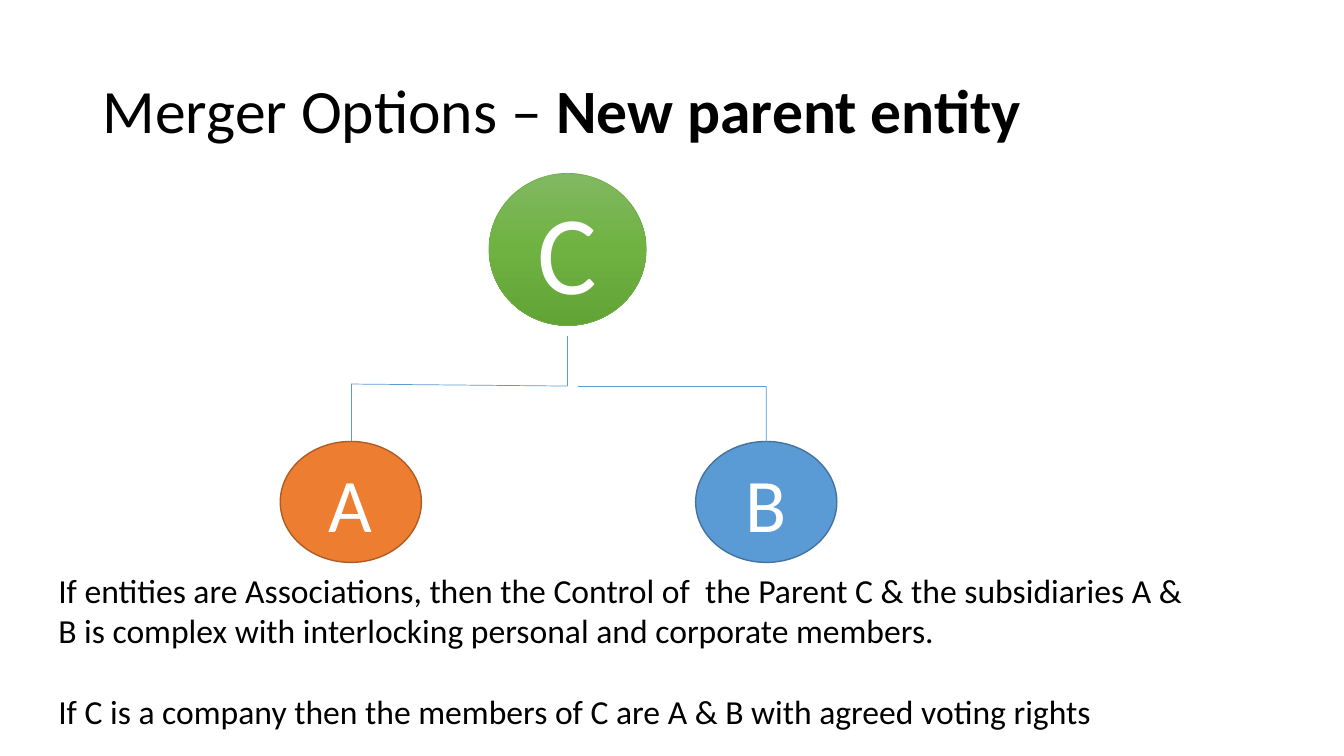
"""Build the merger options slide showing a new parent entity."""
from copy import deepcopy
from dataclasses import dataclass

from lxml import etree
from pptx import Presentation, util as u
from pptx.dml.color import RGBColor
from pptx.enum import shapes, text
from pptx.oxml.ns import qn

COLOURS = {
    "text": "000000", "light": "FFFFFF", "link": "5B9BD5",
    "a": "ED7D31", "a_edge": "AF5C24", "b": "5B9BD5", "b_edge": "43739E",
    "c_top": "81B861", "c_middle": "6FB242", "c_bottom": "62A336", "c_edge": "70AD47",
}
FONT = "Calibri"
NODE_TOP, NODE_WIDTH, NODE_HEIGHT = 4.38, 1.4, 1.2
PARENT_X, A_X, B_X = 5.63, 3.48, 7.6
BAR_Y, A_BAR_Y = 3.83, 3.81


@dataclass
class Entity:
    name: str
    left: float
    top: float
    width: float
    height: float
    size: int
    fills: tuple[str, ...]
    edge: str
    edge_width: float


@dataclass
class Link:
    start: tuple[float, float]
    end: tuple[float, float]
    target: str = ""


ENTITIES = [
    Entity("A", A_X - NODE_WIDTH / 2, NODE_TOP, NODE_WIDTH, NODE_HEIGHT, 54, ("a",), "a_edge", 1),
    Entity("B", B_X - NODE_WIDTH / 2, NODE_TOP, NODE_WIDTH, NODE_HEIGHT, 54, ("b",), "b_edge", 1),
    Entity("C", 4.85, 1.72, 1.56, 1.51, 80, ("c_top", "c_middle", "c_bottom"), "c_edge", 0.5),
]
LINKS = [
    Link((PARENT_X, 3.33), (PARENT_X, BAR_Y)),
    Link((PARENT_X, BAR_Y), (A_X, A_BAR_Y)),
    Link((5.73, BAR_Y), (B_X, BAR_Y)),
    Link((B_X, BAR_Y), (B_X, NODE_TOP), "B"),
    Link((A_X, A_BAR_Y), (A_X, NODE_TOP), "A"),
]
NOTES = [
    "If entities are Associations, then the Control of  the Parent C & the subsidiaries A & "
    "B is complex with interlocking personal and corporate members.",
    "If C is a company then the members of C are A & B with agreed voting rights",
]


def colour(name: str) -> RGBColor:
    return RGBColor.from_string(COLOURS[name])


def write(para, words: str, *, size: float, ink: str = "text", bold: bool = False) -> None:
    span = para.add_run()
    span.text = words
    span.font.name = FONT
    span.font.size = u.Pt(size)
    span.font.bold = bold
    span.font.color.rgb = colour(ink)


def add_box(page, left: float, top: float, width: float, height: float, anchor):
    box = page.shapes.add_textbox(*map(u.Inches, (left, top, width, height)))
    box.text_frame.word_wrap = True
    box.text_frame.vertical_anchor = anchor
    return box.text_frame


def fill_entity(shape, names: tuple[str, ...]) -> None:
    if len(names) == 1:
        shape.fill.solid()
        shape.fill.fore_color.rgb = colour(names[0])
        return
    shape.fill.gradient()
    shape.fill.gradient_angle = 270
    stop_list = next(shape.element.iter(qn("a:gsLst")))
    while len(stop_list) < len(names):
        stop_list.append(deepcopy(stop_list[0]))
    for index, (stop, name) in enumerate(zip(shape.fill.gradient_stops, names)):
        stop.position = index / (len(names) - 1)
        stop.color.rgb = colour(name)


def add_entity(page, entity: Entity):
    shape = page.shapes.add_shape(
        shapes.MSO_SHAPE.FLOWCHART_CONNECTOR,
        *map(u.Inches, (entity.left, entity.top, entity.width, entity.height)))
    shape.shadow.inherit = False
    fill_entity(shape, entity.fills)
    shape.line.color.rgb = colour(entity.edge)
    shape.line.width = u.Pt(entity.edge_width)
    shape.text_frame.vertical_anchor = text.MSO_ANCHOR.MIDDLE
    para = shape.text_frame.paragraphs[0]
    para.alignment = text.PP_ALIGN.CENTER
    write(para, entity.name, size=entity.size, ink="light")
    return shape


def add_link(page, link: Link, nodes: dict) -> None:
    line = page.shapes.add_connector(
        shapes.MSO_CONNECTOR.STRAIGHT, *map(u.Inches, link.start + link.end))
    line.line.color.rgb = colour("link")
    line.line.width = u.Pt(0.5)
    etree.SubElement(line.element.spPr, qn("a:effectLst"))
    if link.target:
        line.end_connect(nodes[link.target], 0)


def main() -> None:
    deck = Presentation()
    deck.slide_width, deck.slide_height = u.Inches(13.33), u.Inches(7.5)
    page = deck.slides.add_slide(deck.slide_layouts[6])

    title = add_box(page, 0.92, 0.4, 11.5, 1.45, text.MSO_ANCHOR.MIDDLE).paragraphs[0]
    title.line_spacing = 0.9
    write(title, "Merger Options – ", size=44)
    write(title, "New parent entity", size=44, bold=True)

    nodes = {entity.name: add_entity(page, entity) for entity in ENTITIES}
    for link in LINKS:
        add_link(page, link, nodes)

    frame = add_box(page, 0.48, 5.6, 11.5, 1.72, text.MSO_ANCHOR.TOP)
    for index, note in enumerate(NOTES):
        para = frame.add_paragraph() if index else frame.paragraphs[0]
        para.space_before = u.Pt(29.3 if index else 0)
        write(para, note, size=24)

    deck.save("out.pptx")


if __name__ == "__main__":
    main()
